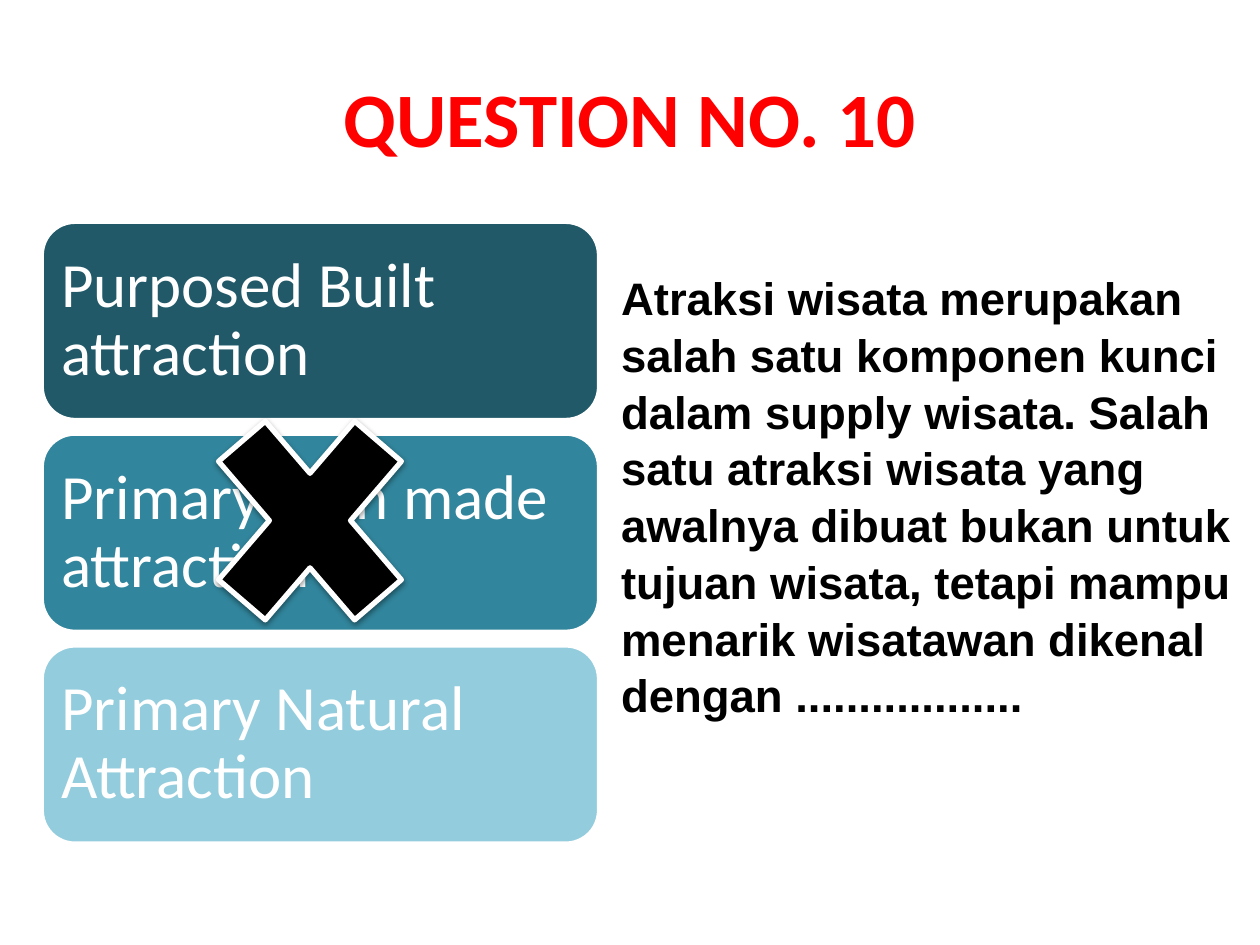
"""Build a quiz slide with three answer cards, a cross and the question text."""
from dataclasses import dataclass

from lxml.etree import SubElement
from pptx import Presentation
from pptx.dml.color import RGBColor
from pptx.enum.shapes import MSO_SHAPE
from pptx.enum.text import MSO_ANCHOR, PP_ALIGN
from pptx.oxml.ns import qn
from pptx.util import Cm, Pt


@dataclass(frozen=True)
class Theme:
    red: RGBColor = RGBColor(0xFF, 0, 0)
    black: RGBColor = RGBColor(0, 0, 0)
    white: RGBColor = RGBColor(0xFF, 0xFF, 0xFF)
    cards: tuple = ("215968", "31859C", "93CDDD")
    heading_font: str = "Calibri"
    body_font: str = "Arial"
    title_size: Pt = Pt(44)
    answer_size: Pt = Pt(36)
    question_size: Pt = Pt(26)


theme = Theme()


def write(shape, text, font, size, color, align, anchor, bold=False):
    frame = shape.text_frame
    frame.word_wrap = True
    frame.vertical_anchor = anchor
    frame.text = text
    paragraph = frame.paragraphs[0]
    paragraph.alignment = align
    run_font = paragraph.runs[0].font
    run_font.name, run_font.size, run_font.bold = font, size, bold
    run_font.color.rgb = color
    return paragraph


def paint(shape, fill, line_width):
    shape.shadow.inherit = False
    shape.fill.solid()
    shape.fill.fore_color.rgb = fill
    shape.line.color.rgb = theme.white
    shape.line.width = line_width


prs = Presentation()
prs.slide_width, prs.slide_height = Cm(25.4), Cm(19.05)
slide = prs.slides.add_slide(prs.slide_layouts[6])

title = slide.shapes.add_textbox(Cm(1.27), Cm(0.76), Cm(22.86), Cm(3.18))
write(title, "QUESTION NO. 10", theme.heading_font, theme.title_size, theme.red,
      PP_ALIGN.CENTER, MSO_ANCHOR.MIDDLE, bold=True)

answers = ("Purposed Built attraction", "Primary man made attraction", "Primary Natural Attraction")
for row, (answer, color) in enumerate(zip(answers, theme.cards)):
    card = slide.shapes.add_shape(
        MSO_SHAPE.ROUNDED_RECTANGLE, Cm(0.85), Cm(4.48 + 4.27 * row), Cm(11.22), Cm(3.98))
    paint(card, RGBColor.from_string(color), Pt(2))
    card.text_frame.margin_left = card.text_frame.margin_right = Cm(0.19)
    card.text_frame.margin_top = card.text_frame.margin_bottom = Cm(0.19)
    answer_line = write(card, answer, theme.heading_font, theme.answer_size, theme.white,
                        PP_ALIGN.LEFT, MSO_ANCHOR.MIDDLE)
    answer_line.line_spacing = 0.9

question = slide.shapes.add_textbox(Cm(12.27), Cm(5.28), Cm(13.13), Cm(9.32))
question_text = write(
    question,
    "Atraksi wisata merupakan salah satu komponen kunci dalam supply wisata. "
    "Salah satu atraksi wisata yang awalnya dibuat bukan untuk tujuan wisata, "
    "tetapi mampu menarik wisatawan dikenal dengan ..................",
    theme.body_font, theme.question_size, theme.black, PP_ALIGN.LEFT, MSO_ANCHOR.TOP, bold=True)
question_text.space_before = Pt(5)
question_text.line_spacing = 1.04

cross = slide.shapes.add_shape(MSO_SHAPE.MATH_MULTIPLY, Cm(3.61), Cm(7.42), Cm(5.28), Cm(6.15))
paint(cross, theme.black, Pt(3))
effects = cross.element.spPr.find(qn("a:effectLst"))
shadow = SubElement(effects, qn("a:outerShdw"), blurRad=str(Pt(3.1)), dist=str(Pt(1.6)),
                    dir="5400000", rotWithShape="0")
shadow_color = SubElement(shadow, qn("a:srgbClr"), val=str(theme.black))
SubElement(shadow_color, qn("a:alpha"), val="38000")

prs.save("out.pptx")
